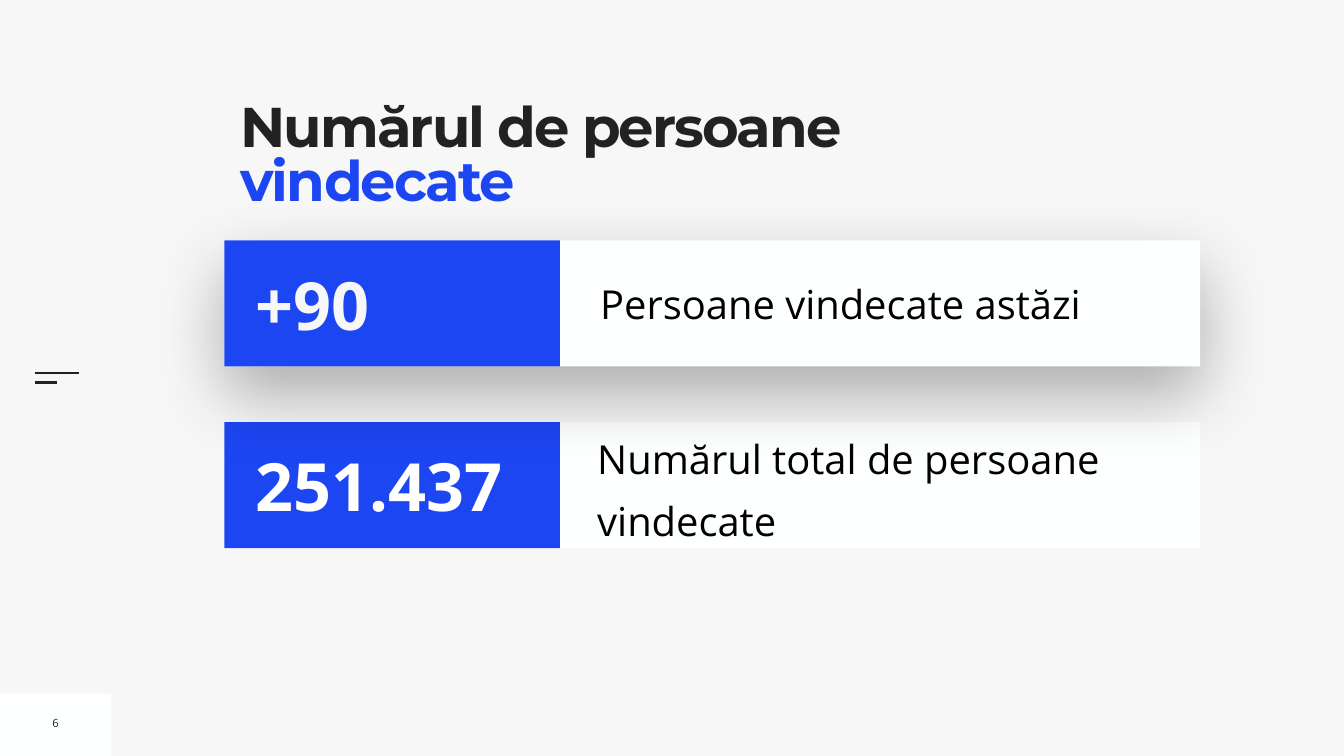
from dataclasses import dataclass

from lxml import etree
from pptx import Presentation
from pptx.dml.color import RGBColor
from pptx.enum.shapes import MSO_CONNECTOR, MSO_SHAPE
from pptx.enum.text import MSO_ANCHOR, MSO_AUTO_SIZE, PP_ALIGN
from pptx.oxml import parse_xml
from pptx.oxml.ns import nsdecls, qn
from pptx.util import Pt

RECT = MSO_SHAPE.RECTANGLE
STRAIGHT = MSO_CONNECTOR.STRAIGHT
TOP, MIDDLE = MSO_ANCHOR.TOP, MSO_ANCHOR.MIDDLE
LEFT, CENTER = PP_ALIGN.LEFT, PP_ALIGN.CENTER
GROW, FIXED = MSO_AUTO_SIZE.SHAPE_TO_FIT_TEXT, MSO_AUTO_SIZE.NONE


@dataclass(frozen=True)
class Theme:
    background: str = "F7F7F7"
    panel: str = "FEFFFF"
    accent: str = "1D46F3"
    ink: str = "222222"
    black: str = "000000"
    white: str = "FFFFFF"
    heading: str = "Montserrat"
    body: str = "Open Sans"
    title_size: int = 80
    value_size: int = 95
    label_size: int = 57
    number_size: int = 16


class SlideBuilder:
    def __init__(self, slide, theme):
        self.s = slide
        self.theme = theme
        fill = slide.background.fill
        fill.solid()
        fill.fore_color.rgb = RGBColor.from_string(theme.background)

    def rect(self, x, y, w, h, color, shadow=False):
        sp = self.s.shapes.add_shape(RECT, Pt(x), Pt(y), Pt(w), Pt(h))
        sp.fill.solid()
        sp.fill.fore_color.rgb = RGBColor.from_string(color)
        sp.line.fill.background()
        sp.shadow.inherit = False
        if shadow:
            effects = sp._element.spPr.find(qn("a:effectLst"))
            effects.append(parse_xml(
                f'<a:outerShdw {nsdecls("a")} blurRad="{Pt(100)}" dist="{Pt(40)}" '
                'dir="5400000" rotWithShape="0">'
                f'<a:srgbClr val="{self.theme.black}"><a:alpha val="30000"/></a:srgbClr>'
                '</a:outerShdw>'))
        return sp

    def line(self, x, y, length):
        cx = self.s.shapes.add_connector(STRAIGHT, Pt(x), Pt(y), Pt(x + length), Pt(y))
        cx.line.width = Pt(3)
        cx.line.color.rgb = RGBColor.from_string(self.theme.ink)
        etree.SubElement(cx._element.spPr, qn("a:effectLst"))

    def text(self, x, y, w, h, runs, size, font, bold=False, inset=7.2, anchor=MIDDLE,
             align=LEFT, wrap=True, fit=GROW, spacing=None, before=None, tracking=None):
        """Add one paragraph; runs is a list of (text, color) pairs."""
        sp = self.s.shapes.add_textbox(Pt(x), Pt(y), Pt(w), Pt(h))
        tf = sp.text_frame
        tf.word_wrap, tf.auto_size, tf.vertical_anchor = wrap, fit, anchor
        tf.margin_left = tf.margin_right = tf.margin_top = tf.margin_bottom = Pt(inset)
        p = tf.paragraphs[0]
        p.alignment = align
        if spacing:
            p.line_spacing = spacing
        if before:
            p.space_before = Pt(before)
        for text, color in runs:
            r = p.add_run()
            r.text = text
            r.font.size, r.font.name, r.font.bold = Pt(size), font, bold
            r.font.color.rgb = RGBColor.from_string(color)
            if tracking:
                r._r.get_or_add_rPr().set("spc", str(round(tracking * 100)))

    def card(self, y, value, value_color, shadow=False):
        """White band with a blue value block at its left."""
        t = self.theme
        self.rect(320.4, y, 1394, 180, t.panel, shadow)
        self.rect(320.4, y, 479.5, 180, t.accent)
        self.text(358.6, y + 25.2, 434, 129.6, [(value, value_color)],
                  t.value_size, t.body, bold=True)

    def label(self, x, y, w, h, text, **style):
        t = self.theme
        self.text(x, y, w, h, [(text, t.black)], t.label_size, t.body, **style)


def main():
    theme = Theme()
    prs = Presentation()
    prs.slide_width, prs.slide_height = Pt(1920), Pt(1080)
    b = SlideBuilder(prs.slides.add_slide(prs.slide_layouts[6]), theme)

    # Page furniture
    b.rect(0, 991, 158.4, 89, theme.panel)
    b.line(49.7, 533.5, 63.4)
    b.line(49.7, 546.5, 31.7)
    b.text(67, 1014.5, 24.5, 36.7, [("6", theme.ink)], theme.number_size, theme.body,
           align=CENTER, wrap=False)

    # Title
    b.text(343.4, 149, 936.7, 196.6,
           [("Numărul de persoane ", theme.ink), ("vindecate", theme.accent)],
           theme.title_size, theme.heading, bold=True, inset=0, anchor=TOP,
           fit=FIXED, spacing=0.8, tracking=-2.7)

    # Total card lies behind the shadow of today's card
    b.card(603, "251.437", theme.white)
    b.label(853.2, 604, 860.4, 170, "Numărul total de persoane vindecate",
            inset=0, spacing=1.3, before=20)

    # Today's card
    b.card(343.5, "+90", theme.background, shadow=True)
    b.label(850.3, 391.7, 846.7, 83.5, "Persoane vindecate astăzi")

    prs.save("out.pptx")


if __name__ == "__main__":
    main()
